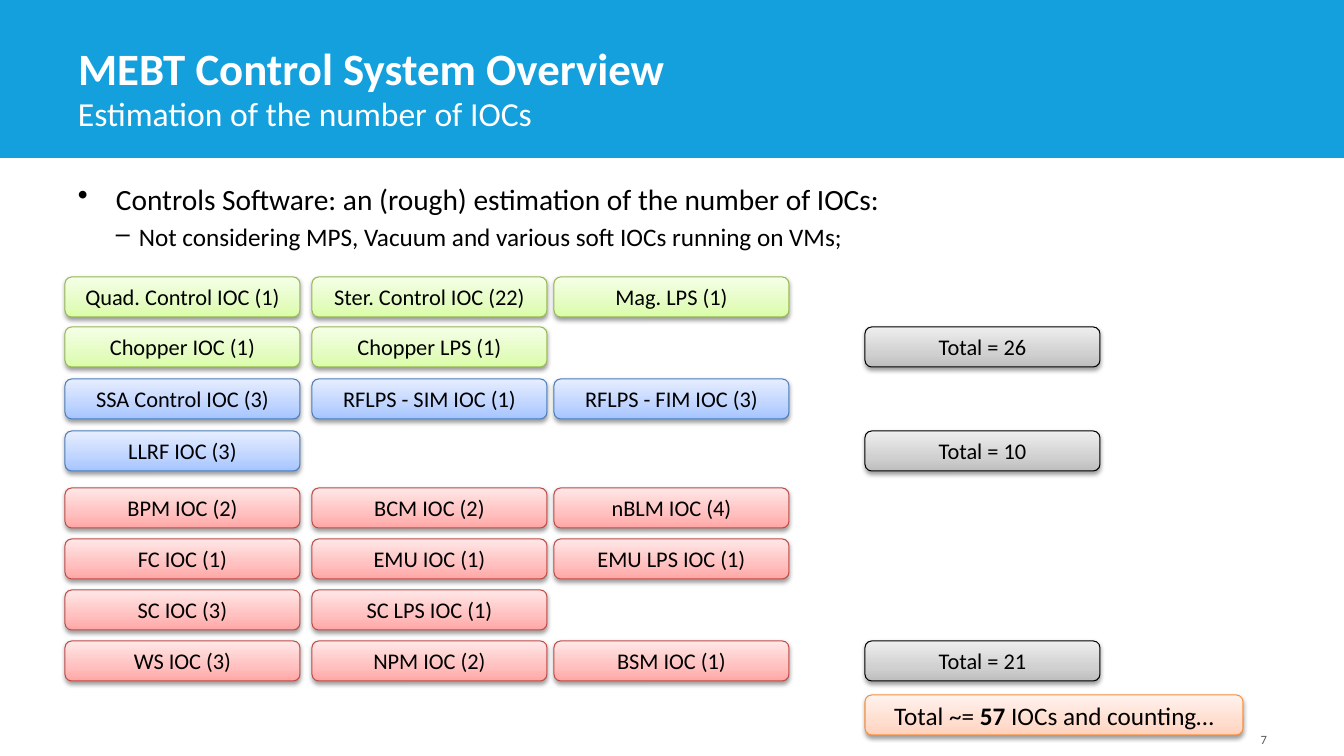
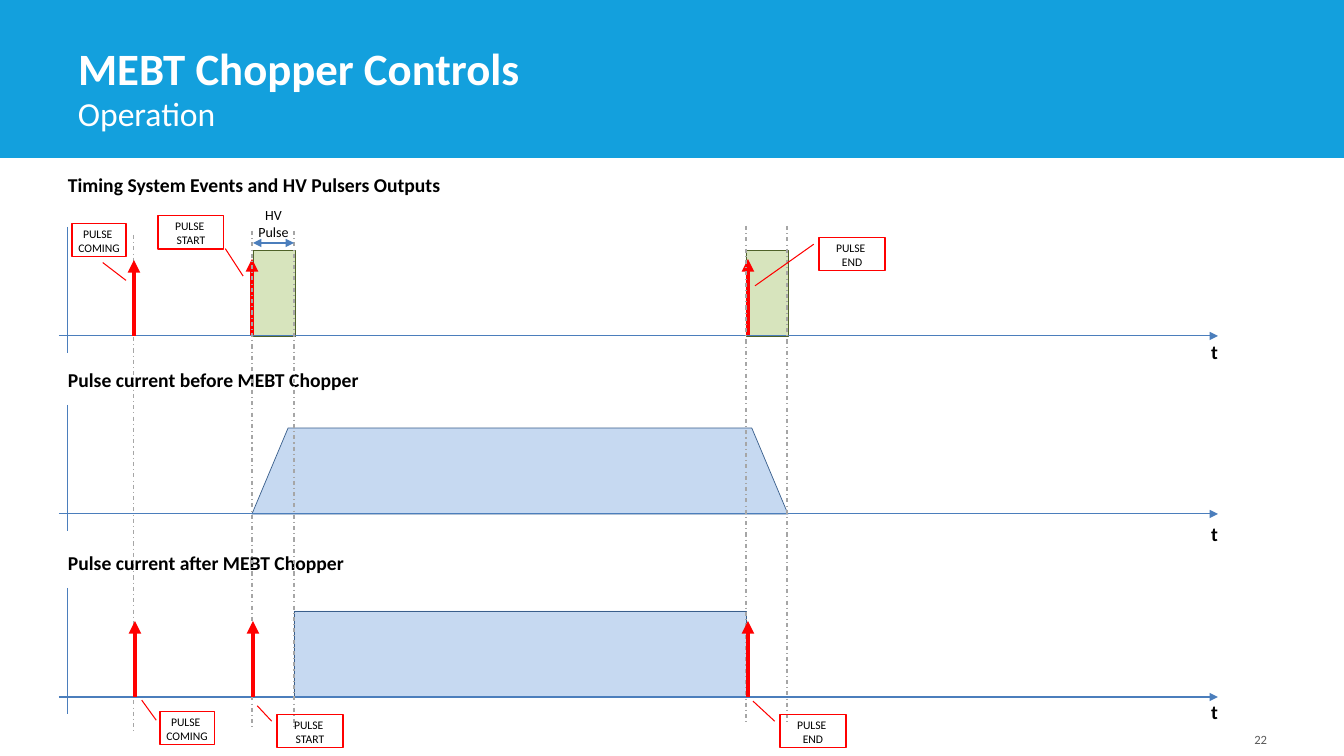
from copy import deepcopy

from pptx import Presentation, util as u
from pptx.dml.color import RGBColor
from pptx.enum import dml, shapes, text
from pptx.oxml import parse_xml
from pptx.oxml.ns import nsdecls, qn

SCALE = 12192000 / 1344
FONT = "Calibri"
KIND = shapes.MSO_SHAPE
ALIGN = text.PP_ALIGN
ANCHOR = text.MSO_ANCHOR
HUES = {
    "band": "13A0DD", "white": "FFFFFF", "black": "000000", "number": "595959",
    "axis": "4B7EBC", "guide": "A6A6A6", "event": "FF0000",
    "beam": "C6D9F1", "beam_edge": "3A5F8C", "pulser": "D7E4BD", "pulser_edge": "4F6228",
}
# Each tone: edge, then gradient from bottom to top
TONES = {
    "green": ("98B955", "DAFDA7", "E4FCC2", "F5FFE7"),
    "blue": ("4B7EBC", "A4C4FF", "BFD4FF", "E6EEFF"),
    "red": ("BF4C48", "FFA6A5", "FFC0BF", "FFE7E7"),
    "grey": ("000000", "BDBDBD", "D1D1D1", "EEEEEE"),
    "peach": ("F69240", "FFD2BD", "FFDED0", "FFF2ED"),
}
GROUPS = [
    ("green", "Total = 26", {
        277: ["Quad. Control IOC (1)", "Ster. Control IOC (22)", "Mag. LPS (1)"],
        327: ["Chopper IOC (1)", "Chopper LPS (1)"]}),
    ("blue", "Total = 10", {
        379: ["SSA Control IOC (3)", "RFLPS - SIM IOC (1)", "RFLPS - FIM IOC (3)"],
        431: ["LLRF IOC (3)"]}),
    ("red", "Total = 21", {
        488: ["BPM IOC (2)", "BCM IOC (2)", "nBLM IOC (4)"],
        539: ["FC IOC (1)", "EMU IOC (1)", "EMU LPS IOC (1)"],
        590: ["SC IOC (3)", "SC LPS IOC (1)"],
        641: ["WS IOC (3)", "NPM IOC (2)", "BSM IOC (1)"]}),
]
COLS = (65, 312, 554)
TOTAL_X = 865


def px(n):
    return u.Emu(round(n * SCALE))


def hue(code):
    return RGBColor.from_string(code)


def write(shape, words, size=16, color="black", bold=False,
          align=ALIGN.LEFT, anchor=ANCHOR.TOP, wrap=True):
    """Fill a shape with text: newline parts paragraphs, ** toggles bold."""
    frame = shape.text_frame
    frame.auto_size = text.MSO_AUTO_SIZE.NONE
    frame.word_wrap = wrap
    frame.vertical_anchor = anchor
    for i, line in enumerate(words.split("\n")):
        para = frame.add_paragraph() if i else frame.paragraphs[0]
        para.alignment = align
        for j, part in enumerate(line.split("**")):
            run = para.add_run()
            run.text = part
            run.font.name = FONT
            run.font.size = u.Pt(size)
            run.font.bold = bold or j % 2 == 1
            run.font.color.rgb = hue(HUES[color])
    return shape


def label(slide, box, words, **form):
    return write(slide.shapes.add_textbox(*map(px, box)), words, **form)


def block(slide, box, kind=KIND.RECTANGLE, fill=None, edge=None, width=0.5):
    shape = slide.shapes.add_shape(kind, *map(px, box))
    shape.shadow.inherit = False
    if fill:
        shape.fill.solid()
        shape.fill.fore_color.rgb = hue(HUES[fill])
    else:
        shape.fill.background()
    if edge:
        shape.line.color.rgb = hue(HUES[edge])
        shape.line.width = u.Pt(width)
    else:
        shape.line.fill.background()
    return shape


def line(slide, ends, color="axis", width=0.75, dash=None, tips=()):
    """Draw a straight line; tips may hold headEnd and tailEnd."""
    wire = slide.shapes.add_connector(shapes.MSO_CONNECTOR.STRAIGHT, *map(px, ends))
    wire.line.color.rgb = hue(HUES[color])
    wire.line.width = u.Pt(width)
    if dash:
        wire.line.dash_style = dash
    props = wire.element.spPr
    for tip in tips:
        props.find(qn("a:ln")).append(
            parse_xml(f'<a:{tip} {nsdecls("a")} type="triangle"/>'))
    props.append(parse_xml(f'<a:effectLst {nsdecls("a")}/>'))


def bullet(para, mark, left, hang):
    props = para._p.get_or_add_pPr()
    props.set("marL", str(px(left)))
    props.set("indent", str(-px(hang)))
    props.append(parse_xml(f'<a:buChar {nsdecls("a")} char="{mark}"/>'))


def chip(slide, x, y, words, tone, width=235, size=16):
    """Rounded box with a three-stop gradient and a soft shadow."""
    edge, *stops = TONES[tone]
    shape = block(slide, (x, y, width, 40), KIND.ROUNDED_RECTANGLE)
    shape.fill.gradient()
    shape.fill.gradient_angle = 90
    ramp = shape.element.spPr.find(".//" + qn("a:gsLst"))
    ramp.insert(1, deepcopy(ramp[0]))
    for stop, spot, code in zip(shape.fill.gradient_stops, (0, 0.35, 1), stops):
        stop.position = spot
        stop.color.rgb = hue(code)
    shape.line.color.rgb = hue(edge)
    shape.line.width = u.Pt(0.75)
    shape.element.spPr.find(qn("a:effectLst")).append(parse_xml(
        f'<a:outerShdw {nsdecls("a")} blurRad="40000" dist="20000" dir="5400000" '
        'rotWithShape="0"><a:srgbClr val="000000"><a:alpha val="38000"/>'
        '</a:srgbClr></a:outerShdw>'))
    write(shape, words, size=size, align=ALIGN.CENTER, anchor=ANCHOR.MIDDLE)


def base(deck, head, sub, number):
    """Add a slide with the band, title, subtitle and slide number."""
    slide = deck.slides.add_slide(deck.slide_layouts[5])
    title = slide.shapes.title
    band = block(slide, (0, 0, 1344, 158), fill="band")
    title.element.addprevious(band.element)
    title.left, title.top, title.width, title.height = map(px, (68, 38, 1049, 62))
    write(title, head, size=32, color="white", bold=True, anchor=ANCHOR.BOTTOM)
    label(slide, (68, 88, 1049, 65), sub, size=24, color="white")
    label(slide, (964, 712, 313, 40), number, size=9, color="number",
          align=ALIGN.RIGHT, anchor=ANCHOR.BOTTOM)
    return slide


def count(deck):
    slide = base(deck, "MEBT Control System Overview",
                 "Estimation of the number of IOCs", "7")
    intro = label(
        slide, (68, 176, 1210, 90),
        "Controls Software: an (rough) estimation of the number of IOCs:\n"
        "Not considering MPS, Vacuum and various soft IOCs running on VMs;", size=21)
    main, note = intro.text_frame.paragraphs
    bullet(main, "•", 38, 38)
    note.space_before = u.Pt(3.6)
    bullet(note, "–", 61, 23)
    note.runs[0].font.size = u.Pt(18)
    for tone, total, rows in GROUPS:
        for y, names in rows.items():
            for x, name in zip(COLS, names):
                chip(slide, x, y, name, tone)
        chip(slide, TOTAL_X, max(rows), total, "grey")
    chip(slide, TOTAL_X, 695, "Total ~= **57 **IOCs and counting…", "peach",
         width=378, size=18)


def axes(slide, y, head, head_y, t_y):
    """Place one time plot whose upright axis starts at y."""
    line(slide, (68, y, 68, y + 126))
    line(slide, (59, y + 109, 1218, y + 109), tips=["tailEnd"])
    label(slide, (58, head_y, 480, 35), head, size=14, bold=True)
    label(slide, (1202, t_y, 25, 35), "t", size=14, bold=True,
          align=ALIGN.CENTER, wrap=False)


def event(slide, x, y):
    """Red arrow that rises from y."""
    line(slide, (x, y, x, y - 76), color="event", width=3, tips=["tailEnd"])


def guide(slide, x, y):
    line(slide, (x, y, x, y + 496), color="guide", dash=dml.MSO_LINE.DASH_DOT)


def call(slide, x, y, word, *bends):
    """Event name in a callout; bends are its leader adjustments."""
    wide = 54 if word == "COMING" else 66
    shape = block(slide, (x, y, wide, 33), KIND.LINE_CALLOUT_1,
                  edge="event", width=0.75)
    for i, bend in enumerate(bends):
        shape.adjustments[i] = bend
    write(shape, f"PULSE \n{word}", size=8.3, align=ALIGN.CENTER,
          anchor=ANCHOR.MIDDLE, wrap=False)


def timing(deck):
    slide = base(deck, "MEBT Chopper Controls", "Operation", "22")
    block(slide, (294, 611, 452, 86), fill="beam", edge="beam_edge")
    for x in (746, 253):
        block(slide, (x, 250, 42, 86), fill="pulser", edge="pulser_edge")
    beam = block(slide, (252, 428, 536, 86), KIND.TRAPEZOID, "beam", "beam_edge")
    beam.adjustments[0] = 0.42
    guide(slide, 134, 235)
    for plot in ((227, "Timing System Events and HV Pulsers Outputs", 168, 335),
                 (405, "Pulse current before MEBT Chopper", 363, 517),
                 (588, "Pulse current after MEBT Chopper", 546, 695)):
        axes(slide, *plot)
    for spot in ((134, 336), (252, 335), (748, 335)):
        event(slide, *spot)
    for spot in ((252, 231), (746, 226), (294, 231), (787, 226)):
        guide(slide, *spot)
    for x in (135, 253, 748):
        event(slide, x, 697)
    label(slide, (247, 202, 53, 40), "HV\nPulse", size=10,
          align=ALIGN.CENTER, wrap=False)
    line(slide, (253, 243, 294, 243), tips=["headEnd", "tailEnd"])
    for tag in ((72, 224, "COMING", 1.17, 0.57, 1.71, 1),
                (158, 216, "START", 0.99, 1.02, 1.82, 1.29),
                (819, 238, "END", 0.19, -0.08, 1.45, -0.97),
                (160, 712, "COMING", 0.25, -0.07, -0.36, -0.34),
                (277, 715, "START", 0.19, -0.08, -0.28, -0.3),
                (780, 715, "END", 0.19, -0.08, -0.42, -0.41)):
        call(slide, *tag)


def main():
    deck = Presentation()
    deck.slide_width, deck.slide_height = px(1344), px(756)
    count(deck)
    timing(deck)
    deck.save("out.pptx")


if __name__ == "__main__":
    main()
